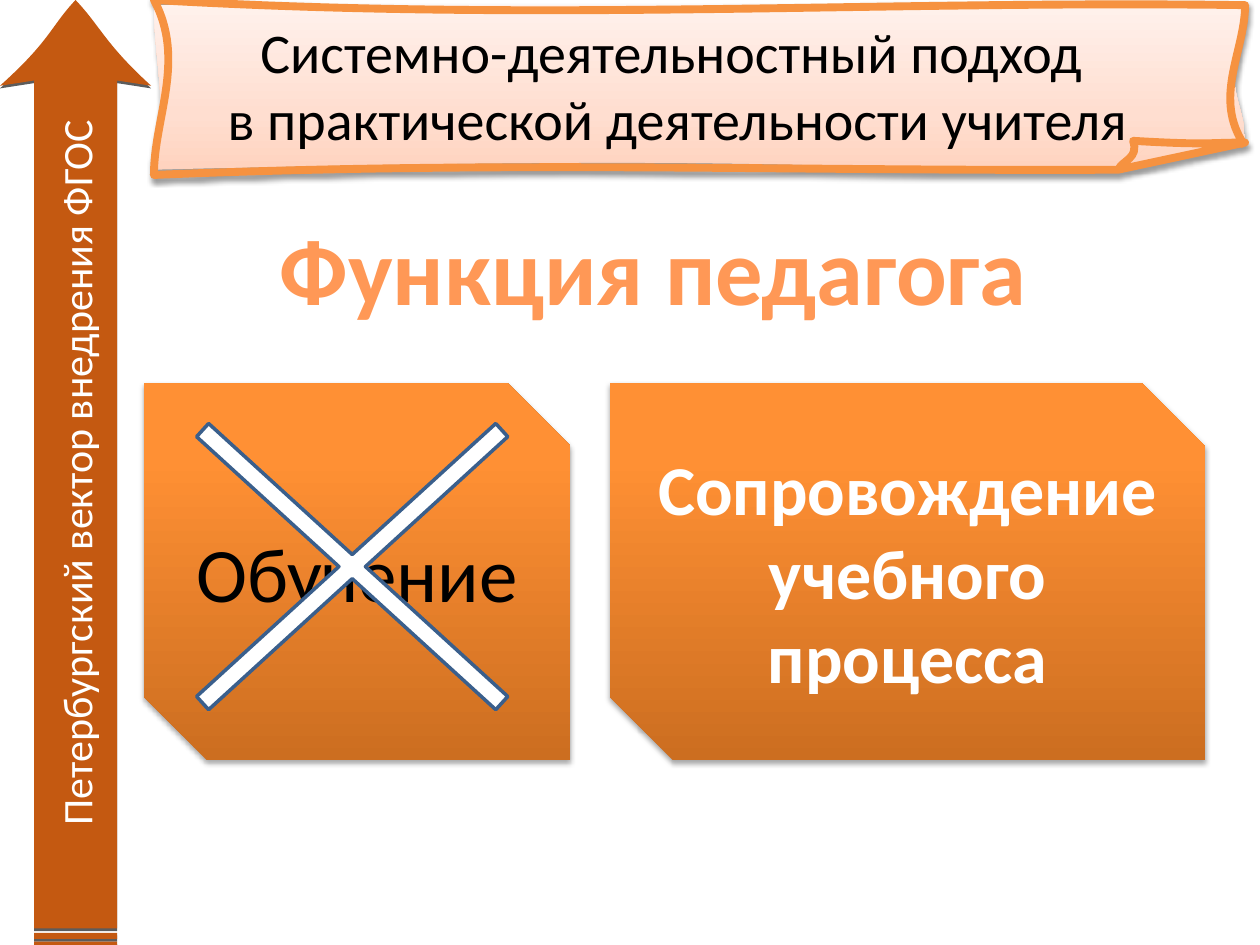
from lxml import etree
from pptx import Presentation
from pptx.dml.color import RGBColor
from pptx.enum.shapes import MSO_SHAPE
from pptx.enum.text import MSO_ANCHOR, PP_ALIGN
from pptx.oxml.ns import qn
from pptx.util import Pt

SNIPPED = MSO_SHAPE.SNIP_2_DIAG_RECTANGLE
CROSS = MSO_SHAPE.MATH_MULTIPLY
MIDDLE, TOP = MSO_ANCHOR.MIDDLE, MSO_ANCHOR.TOP
CENTER = PP_ALIGN.CENTER
CLOSE = ()


class Theme:
    font = "Calibri"
    black, white = "000000", "FFFFFF"
    arrow, banner_line, cross_line = "C45911", "F69240", "3A5F8C"
    banner = ((0, "FFD2BD"), (35, "FFDED0"), (100, "FFF2ED"))
    card = ((0, "CC6E20"), (80, "FF9034"), (100, "FF9136"))
    heading = ((0, "9D4700"), (78, "FF9856"), (100, "FFF5F1"))
    arrow_size, title_size, card_size, key_size, heading_size = 24, 32, 44, 40, 54


# Each contour is a start point, then lines (2 numbers), Bezier curves (6) and CLOSE.
BANNER_BOX = (88, 0, 623.5, 100)
BANNER_BODY = [
    (0, 3), (623.5, 3), (609, 54, 623.5, 55.5, 623.5, 81.5),
    (579, 87, 594, 91.5, 551, 97), (367, 97, 360, 88, 0, 97),
    (9, 65, 0, 34.5, 0, 3), CLOSE]
BANNER_FOLD = [(551, 97), (572.5, 80.5), (623.5, 81.5), (551, 97), CLOSE]
BANNER_OUTLINE = [
    (551, 97), (553.5, 91.5, 563, 90.5, 559.5, 80.5),
    (602.5, 83, 602, 81.5, 623.5, 81.5), (551, 97),
    (367, 98, 199.5, 91.5, 0, 100), (0, 67.5, 18.5, 34.5, 0, 0),
    (222.5, 13, 415.5, 0, 623.5, 3), (623.5, 29.5, 604.5, 56, 623.5, 83.5)]

# The arrow points right and is then turned upwards.
ARROW_BOX = (-226.8, 226.8, 540, 86.4)
SHAFT_T, SHAFT_B = 19.5, 67
ARROW = [
    (9.5, SHAFT_T), (494, SHAFT_T), (491, 0), (517, 29, 525, 29, 540, 43.2),
    (525, 57.5, 515, 60, 491, 86.4), (494, SHAFT_B), (9.5, SHAFT_B), CLOSE]
ARROW_STRIPES = [
    (left, y) if y is not None else CLOSE
    for near, far in ((0, 2), (3.5, 7))
    for left, y in ((near, SHAFT_T), (far, SHAFT_T), (far, SHAFT_B), (near, SHAFT_B), (0, None))]


def add_color(parent, color):
    return etree.SubElement(parent, qn("a:srgbClr"), val=color)


def gradient(stops, angle):
    grad = etree.Element(qn("a:gradFill"), rotWithShape="1")
    gs_list = etree.SubElement(grad, qn("a:gsLst"))
    for pos, color in stops:
        add_color(etree.SubElement(gs_list, qn("a:gs"), pos=str(pos * 1000)), color)
    etree.SubElement(grad, qn("a:lin"), ang=str(angle * 60000), scaled="0")
    return grad


def style(sp, fill, line=None, width=1, shadow=None):
    """Fill is a colour or gradient stops; shadow is (alpha %, blur, distance)."""
    sp.shadow.inherit = False
    sp.fill.solid()
    if isinstance(fill, str):
        sp.fill.fore_color.rgb = RGBColor.from_string(fill)
    else:
        solid = sp._element.spPr.find(qn("a:solidFill"))
        solid.getparent().replace(solid, gradient(fill, 270))
    if line:
        sp.line.color.rgb = RGBColor.from_string(line)
        sp.line.width = Pt(width)
    else:
        sp.line.fill.background()
    if shadow:
        alpha, blur, dist = shadow
        effects = sp._element.spPr.find(qn("a:effectLst"))
        outer = etree.SubElement(effects, qn("a:outerShdw"), blurRad=str(Pt(blur)),
                                 dist=str(Pt(dist)), dir="5400000", rotWithShape="0")
        etree.SubElement(add_color(outer, Theme.black), qn("a:alpha"), val=str(alpha * 1000))
    return sp


def set_text(sp, text, size, color, bold=False, wrap=True, anchor=MIDDLE, side=7.2):
    tf = sp.text_frame
    frame = dict(text=text, word_wrap=wrap, vertical_anchor=anchor,
                 margin_left=Pt(side), margin_right=Pt(side))
    for name, value in frame.items():
        setattr(tf, name, value)
    p = tf.paragraphs[0]
    p.alignment = CENTER
    for r in p.runs:
        for name, value in dict(name=Theme.font, size=Pt(size), bold=bold).items():
            setattr(r.font, name, value)
        if isinstance(color, str):
            r.font.color.rgb = RGBColor.from_string(color)
        else:
            r._r.get_or_add_rPr().insert(0, gradient(color, 90))


def add_path(path_list, contour, size, flags):
    path = etree.SubElement(path_list, qn("a:path"), **size, **flags)
    tags = {0: "a:close", 2: "a:lnTo", 6: "a:cubicBezTo"}
    starting = True
    for seg in contour:
        node = etree.SubElement(path, qn("a:moveTo" if starting else tags[len(seg)]))
        for x, y in zip(seg[::2], seg[1::2]):
            etree.SubElement(node, qn("a:pt"), x=str(Pt(x)), y=str(Pt(y)))
        starting = seg == CLOSE


def add_freeform(s, box, paths, **look):
    """Paths are pairs of a contour and its path attributes, relative to the box."""
    left, top, width, height = map(Pt, box)
    builder = s.shapes.build_freeform(left, top, scale=1.0)
    builder.add_line_segments([(left + width, top), (left + width, top + height),
                               (left, top + height)])
    sp = builder.convert_to_shape()
    path_list = sp._element.spPr.find(qn("a:custGeom")).find(qn("a:pathLst"))
    path_list.clear()
    for contour, flags in paths:
        add_path(path_list, contour, dict(w=str(width), h=str(height)), flags)
    return style(sp, **look)


def add_shape(s, kind, box, **look):
    return style(s.shapes.add_shape(kind, *map(Pt, box)), **look)


def add_text(s, box, *args, **fmt):
    set_text(s.shapes.add_textbox(*map(Pt, box)), *args, **fmt)


def add_card(s, left, width, *args, **fmt):
    sp = add_shape(s, SNIPPED, (left, 219, width, 215.3), fill=Theme.card,
                   shadow=(35, 3.1, 1.8))
    set_text(sp, *args, **fmt)


def add_banner(s):
    no_line, no_fill = dict(stroke="0"), dict(fill="none")
    add_freeform(s, BANNER_BOX,
                 [(BANNER_BODY, no_line), (BANNER_FOLD, no_line), (BANNER_OUTLINE, no_fill)],
                 fill=Theme.banner, line=Theme.banner_line, width=4.5, shadow=(38, 3.1, 1.6))
    add_text(s, (63.4, 3.5, 648, 90),
             "Системно-деятельностный подход \vв практической деятельности учителя",
             Theme.title_size, Theme.black)


def add_arrow(s):
    sp = add_freeform(s, ARROW_BOX, [(ARROW_STRIPES + ARROW, {})],
                      fill=Theme.arrow, shadow=(63, 0, 1.5))
    sp.rotation = 270
    set_text(sp, "Петербургский вектор внедрения ФГОС", Theme.arrow_size, Theme.white)


def main():
    prs = Presentation()
    prs.slide_width, prs.slide_height = Pt(720), Pt(540)
    s = prs.slides.add_slide(prs.slide_layouts[6])
    add_banner(s)
    add_arrow(s)
    add_text(s, (150.4, 116.8, 446, 72.7), "Функция педагога", Theme.heading_size,
             Theme.heading, bold=True, wrap=False, anchor=TOP)
    add_card(s, 82.3, 243.7, "Обучение", Theme.card_size, Theme.black, side=3)
    cross = add_shape(s, CROSS, (36.8, 173.7, 329, 300.2), fill=Theme.white,
                      line=Theme.cross_line, width=2)
    cross.adjustments[0] = 0.034
    add_card(s, 348.6, 340, "Сопровождение учебного процесса", Theme.key_size,
             Theme.white, bold=True, side=0)
    prs.save("out.pptx")


if __name__ == "__main__":
    main()
